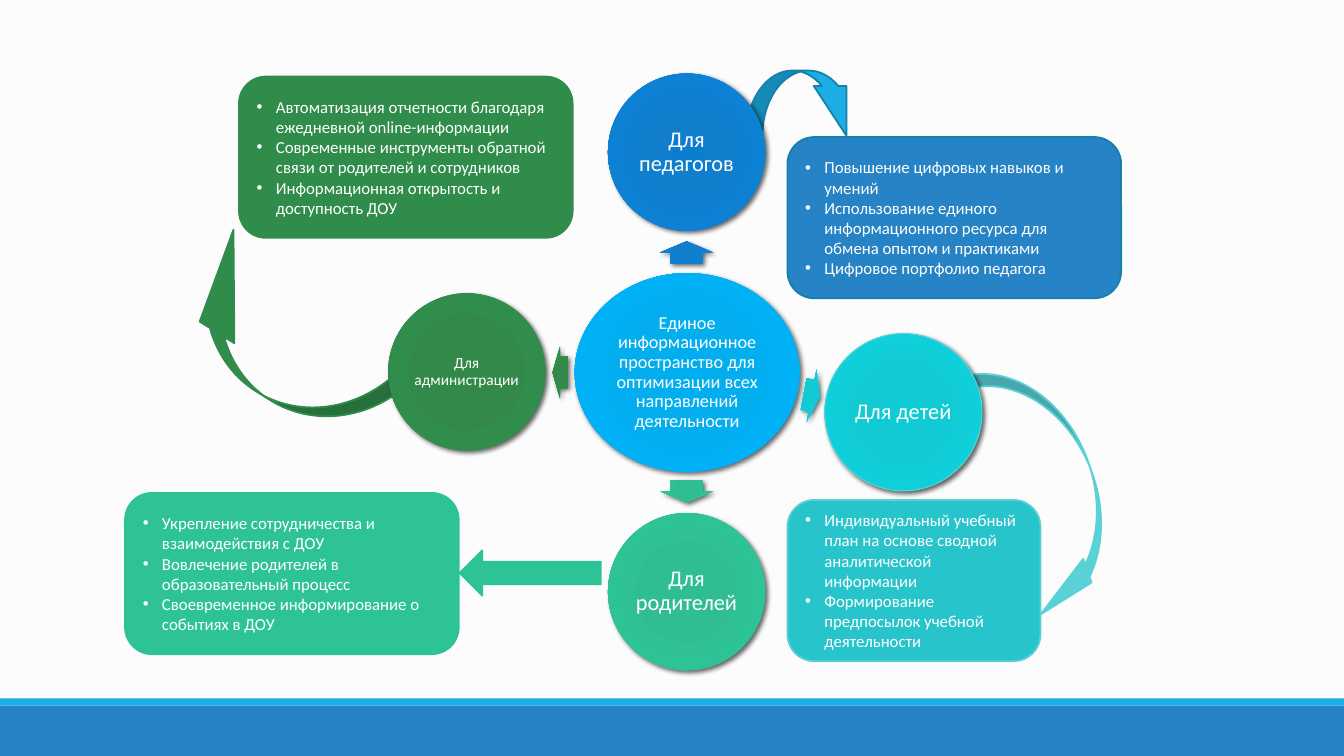
from dataclasses import dataclass

from lxml import etree
from pptx import Presentation
from pptx.dml.color import RGBColor
from pptx.enum.shapes import MSO_SHAPE as Shape
from pptx.enum.text import MSO_ANCHOR as Anchor, PP_ALIGN as Align
from pptx.oxml.ns import qn
from pptx.util import Pt

PX = 9144  # EMU in one px, 100 px to the inch


@dataclass(frozen=True)
class Theme:
    font: str = "Calibri"
    page: str = "FCFCFC"
    white: str = "FFFFFF"
    blue: str = "2683C6"
    sky: str = "1CADE4"
    deep_blue: str = "1580A9"
    green: str = "308C4A"
    mint: str = "2EC397"
    teal: str = "28C4CC"
    aqua: str = "5AD1D7"
    # Radial gradient colours, from centre to rim
    hub_tones: tuple = ("00ADEF", "03ADEE", "00B1F5", "12B1EE")
    blue_tones: tuple = ("0D7ECF", "117ECD", "0D81D4", "1E84CE")
    teal_tones: tuple = ("0ECBD5", "12CAD3", "0FD0DA", "20CBD4")
    mint_tones: tuple = ("2DBE94", "30BD94", "2EC397", "3CC09A")
    green_tones: tuple = ("2F8949", "32894A", "318D4B", "3A8C51")
    tone_stops: tuple = (0, 34, 70, 100)
    card_size: int = 12
    hub_size: int = 13
    audience_size: int = 16
    small_size: int = 11


THEME = Theme()

# Content: boxes are (left, top, width, height) in px
FOOTER = [((0, 700, 1333, 50), THEME.blue), ((0, 693, 1333, 7), THEME.sky)]

HUB = ("Единое информационное пространство для оптимизации всех направлений деятельности",
       (570, 271, 223, 197))

DIAMETER = 156
AUDIENCES = [  # text, left, top, size, tones, rim, spoke box, spoke rotation
    ("Для педагогов", 603, 73, THEME.audience_size, THEME.blue_tones, None,
     (670, 224, 22, 53), 270),
    ("Для детей", 818, 331, THEME.audience_size, THEME.teal_tones, THEME.aqua,
     (797, 366, 16, 53), 10.6),
    ("Для родителей", 603, 509, THEME.audience_size, THEME.mint_tones, None,
     (670, 461, 22, 53), 90),
    ("Для администрации", 385, 291, THEME.small_size, THEME.green_tones, None,
     (548, 343, 15, 53), 180),
]

CARD_HEIGHT = 160
CARDS = [  # left, top, width, fill, line, points
    (124, 489, 331, THEME.mint, THEME.mint, [
        "Укрепление сотрудничества и взаимодействия с ДОУ",
        "Вовлечение родителей в образовательный процесс",
        "Своевременное информирование о событиях в ДОУ"]),
    (237, 76, 331, THEME.green, THEME.green, [
        "Автоматизация отчетности благодаря ежедневной online-информации",
        "Современные инструменты обратной связи от родителей и сотрудников",
        "Информационная открытость и доступность ДОУ"]),
    (781, 136, 331, THEME.blue, THEME.deep_blue, [
        "Повышение цифровых навыков и умений",
        "Использование единого информационного ресурса для обмена опытом и практиками",
        "Цифровое портфолио педагога"]),
    (781, 496, 251, THEME.teal, THEME.aqua, [
        "Индивидуальный учебный план на основе сводной аналитической информации",
        "Формирование предпосылок учебной деятельности"]),
]

CURVED_ARROWS = [  # preset, box, rotation, adjustments, fill, line
    (Shape.CURVED_DOWN_ARROW, (907, 435, 261, 95), 70.5, (0.135, 0.263, 0.613),
     THEME.aqua, THEME.aqua),
    (Shape.CURVED_DOWN_ARROW, (740, 70, 116, 65), 0, (0.25, 0.5, 0.766),
     THEME.sky, THEME.deep_blue),
    (Shape.CURVED_LEFT_ARROW, (227, 210, 124, 254), 122.1, (0.134, 0.327, 0.767),
     THEME.green, THEME.green),
]
PARENTS_ARROW = (456, 546, 140, 45)


def add_child(parent, tag, **attributes):
    return etree.SubElement(parent, qn(tag), {k: str(v) for k, v in attributes.items()})


def fill_radial(shape, tones):
    gradient = etree.Element(qn("a:gradFill"), {"rotWithShape": "1"})
    stops = add_child(gradient, "a:gsLst")
    for position, tone in zip(THEME.tone_stops, tones):
        stop = add_child(stops, "a:gs", pos=position * 1000)
        add_child(stop, "a:srgbClr", val=tone)
    circle = add_child(gradient, "a:path", path="circle")
    add_child(circle, "a:fillToRect", **dict.fromkeys("ltrb", 100000))
    shape._element.spPr.find(qn("a:prstGeom")).addnext(gradient)


def cast_shadow(shape):
    effects = shape._element.spPr.find(qn("a:effectLst"))
    shadow = add_child(effects, "a:outerShdw", blurRad=Pt(3.5), dist=Pt(2),
                       dir=45 * 60000, algn="ctr", rotWithShape=0)
    black = add_child(shadow, "a:srgbClr", val="000000")
    add_child(black, "a:alpha", val=60000)


def draw(slide, preset, box, fill=None, tones=None, line=None, line_width=1.25,
         rotation=0, adjustments=()):
    shape = slide.shapes.add_shape(preset, *(length * PX for length in box))
    shape.rotation = rotation
    for index, value in enumerate(adjustments):
        shape.adjustments[index] = value
    shape.shadow.inherit = False
    if line:
        shape.line.color.rgb = RGBColor.from_string(line)
        shape.line.width = Pt(line_width)
    else:
        shape.line.fill.background()
    if tones:
        fill_radial(shape, tones)
        cast_shadow(shape)
    else:
        shape.fill.solid()
        shape.fill.fore_color.rgb = RGBColor.from_string(fill)
    return shape


def write(shape, paragraphs, size, align=Align.LEFT, spacing=None, inset=None, bullet=None):
    frame = shape.text_frame
    frame.word_wrap = True
    frame.vertical_anchor = Anchor.MIDDLE
    if inset is not None:
        frame.margin_left = frame.margin_right = inset * PX
        frame.margin_top = frame.margin_bottom = inset * PX
    for index, text in enumerate(paragraphs):
        paragraph = frame.add_paragraph() if index else frame.paragraphs[0]
        paragraph.alignment = align
        paragraph.line_spacing = spacing
        run = paragraph.add_run()
        run.text = text
        run.font.name = THEME.font
        run.font.size = Pt(size)
        run.font.color.rgb = RGBColor.from_string(THEME.white)
        if bullet:
            properties = paragraph._p.get_or_add_pPr()
            properties.set("marL", str(19 * PX))
            properties.set("indent", str(-19 * PX))
            add_child(properties, "a:buFont", typeface="Arial")
            add_child(properties, "a:buChar", char=bullet)


def draw_circle(slide, text, box, size, tones, rim=None):
    circle = draw(slide, Shape.OVAL, box, tones=tones, line=rim, line_width=0.75)
    write(circle, [text], size, align=Align.CENTER, spacing=0.9, inset=2)


def main():
    deck = Presentation()
    deck.slide_width, deck.slide_height = 1333 * PX, 750 * PX
    slide = deck.slides.add_slide(deck.slide_layouts[6])
    slide.background.fill.solid()
    slide.background.fill.fore_color.rgb = RGBColor.from_string(THEME.page)

    # Footer bands
    for box, fill in FOOTER:
        draw(slide, Shape.RECTANGLE, box, fill=fill)

    # Curved arrows from audiences to cards
    for preset, box, rotation, adjustments, fill, line in CURVED_ARROWS:
        draw(slide, preset, box, fill=fill, line=line, rotation=rotation,
             adjustments=adjustments)

    # Hub with its spokes and audiences
    draw_circle(slide, *HUB, THEME.hub_size, THEME.hub_tones)
    for text, left, top, size, tones, rim, spoke, rotation in AUDIENCES:
        draw(slide, Shape.RIGHT_ARROW, spoke, tones=tones, rotation=rotation,
             adjustments=(0.6, 0.5))
        draw_circle(slide, text, (left, top, DIAMETER, DIAMETER), size, tones, rim)

    # Cards with benefits
    for left, top, width, fill, line, points in CARDS:
        card = draw(slide, Shape.ROUNDED_RECTANGLE, (left, top, width, CARD_HEIGHT),
                    fill=fill, line=line)
        write(card, points, THEME.card_size, bullet="•")

    # Straight arrow from parents to their card
    draw(slide, Shape.LEFT_ARROW, PARENTS_ARROW, fill=THEME.mint, line=THEME.mint)

    deck.save("out.pptx")


if __name__ == "__main__":
    main()
